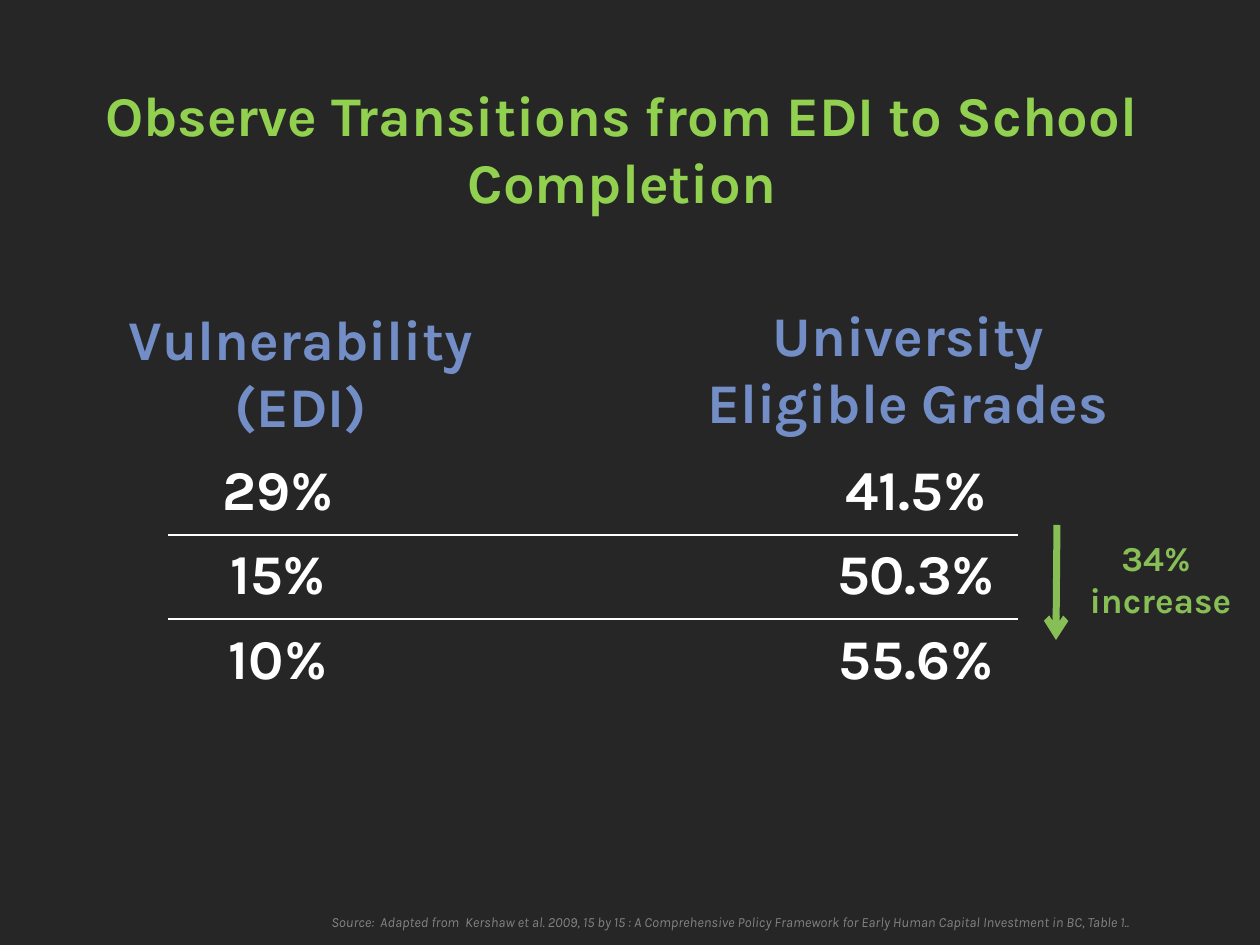
from dataclasses import dataclass

from lxml import etree
from pptx import Presentation
from pptx.dml.color import RGBColor
from pptx.enum.shapes import MSO_CONNECTOR
from pptx.enum.text import MSO_ANCHOR, PP_ALIGN
from pptx.oxml.ns import qn
from pptx.util import Emu, Inches, Pt

PX_PER_INCH = 126
FONT = "Karla"
BACKGROUND = RGBColor(0x26, 0x26, 0x26)
TITLE_GREEN = RGBColor(0x92, 0xD0, 0x50)
INCREASE_GREEN = RGBColor(0x87, 0xBE, 0x55)
HEADING_BLUE = RGBColor(0x73, 0x8E, 0xC7)
SOURCE_GRAY = RGBColor(0x82, 0x82, 0x82)
WHITE = RGBColor(0xFF, 0xFF, 0xFF)


@dataclass(frozen=True)
class Box:
    left: int
    top: int
    width: int
    height: int


@dataclass(frozen=True)
class TextStyle:
    size: int
    color: RGBColor
    bold: bool = True
    italic: bool = False
    align: PP_ALIGN = PP_ALIGN.CENTER
    anchor: MSO_ANCHOR = MSO_ANCHOR.TOP
    space_after: int = 0


@dataclass(frozen=True)
class Column:
    heading: str
    heading_box: Box
    values: tuple[str, ...]
    values_box: Box


TITLE = TextStyle(32, TITLE_GREEN)
HEADING = TextStyle(32, HEADING_BLUE, anchor=MSO_ANCHOR.MIDDLE)
VALUES = TextStyle(32, WHITE, anchor=MSO_ANCHOR.MIDDLE, space_after=10)
INCREASE = TextStyle(20, INCREASE_GREEN)
SOURCE = TextStyle(8, SOURCE_GRAY, bold=False, italic=True, align=PP_ALIGN.LEFT)

COLUMNS = (
    Column("Vulnerability (EDI)", Box(105, 340, 392, 63),
           ("29%", "15%", "10%"), Box(194, 525, 168, 95)),
    Column("University Eligible Grades", Box(672, 336, 472, 63),
           ("41.5%", "50.3%", "55.6%"), Box(814, 525, 204, 95)),
)
ROW_RULES = (535, 619)


def px(length: int) -> Emu:
    return Emu(round(length * Inches(1) / PX_PER_INCH))


def place(shape, box: Box) -> None:
    shape.left, shape.top = px(box.left), px(box.top)
    shape.width, shape.height = px(box.width), px(box.height)


def write(shape, lines: tuple[str, ...], style: TextStyle) -> None:
    frame = shape.text_frame
    frame.word_wrap = True
    frame.vertical_anchor = style.anchor
    frame.margin_left = frame.margin_right = Inches(0.1)
    frame.margin_top = frame.margin_bottom = Inches(0.05)
    frame.text = "\n".join(lines)
    for paragraph in frame.paragraphs:
        paragraph.alignment = style.align
        paragraph.line_spacing = 1.0
        paragraph.space_before = Pt(0)
        paragraph.space_after = Pt(style.space_after)
        font = paragraph.font
        font.name = FONT
        font.size = Pt(style.size)
        font.bold = style.bold
        font.italic = style.italic
        font.color.rgb = style.color


def add_text(slide, box: Box, lines: tuple[str, ...], style: TextStyle):
    text_box = slide.shapes.add_textbox(0, 0, 0, 0)
    place(text_box, box)
    write(text_box, lines, style)
    return text_box


def add_line(slide, start: tuple[int, int], end: tuple[int, int],
             color: RGBColor, width: float, arrow: bool = False) -> None:
    line = slide.shapes.add_connector(
        MSO_CONNECTOR.STRAIGHT, *map(px, start), *map(px, end))
    line.line.color.rgb = color
    line.line.width = Pt(width)
    properties = line._element.spPr
    if arrow:
        etree.SubElement(properties.find(qn("a:ln")), qn("a:tailEnd"), type="arrow")
    etree.SubElement(properties, qn("a:effectLst"))


def main() -> None:
    deck = Presentation()
    deck.slide_width, deck.slide_height = px(1260), px(945)
    slide = deck.slides.add_slide(deck.slide_layouts[5])
    slide.background.fill.solid()
    slide.background.fill.fore_color.rgb = BACKGROUND

    place(slide.shapes.title, Box(87, 74, 1070, 229))
    write(slide.shapes.title,
          ("Observe Transitions from EDI to School Completion",), TITLE)

    for column in COLUMNS:
        add_text(slide, column.heading_box, (column.heading,), HEADING)
        add_text(slide, column.values_box, column.values, VALUES)
    for y in ROW_RULES:
        add_line(slide, (168, y), (1018, y), WHITE, 0.75)

    increase = add_text(slide, Box(1071, 530, 179, 97), ("34% \vincrease",), INCREASE)
    increase.fill.solid()
    increase.fill.fore_color.rgb = BACKGROUND
    add_line(slide, (1057, 525), (1056, 640), INCREASE_GREEN, 4, arrow=True)

    add_text(slide, Box(319, 907, 973, 29), (
        "Source:  Adapted from  Kershaw et al. 2009, 15 by 15 : A Comprehensive Policy "
        "Framework for Early Human Capital Investment in BC, Table 1..",), SOURCE)

    deck.save("out.pptx")


if __name__ == "__main__":
    main()
